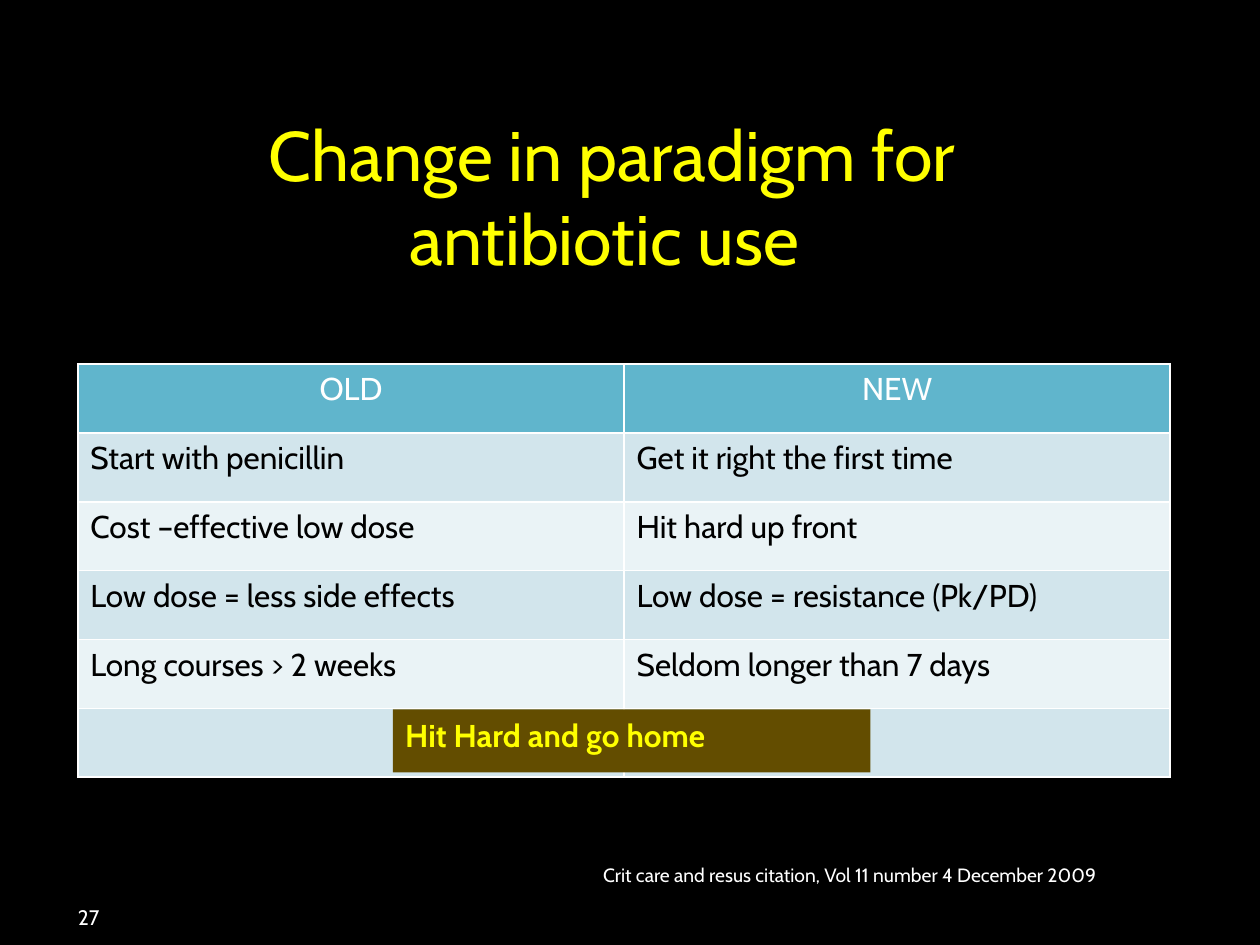
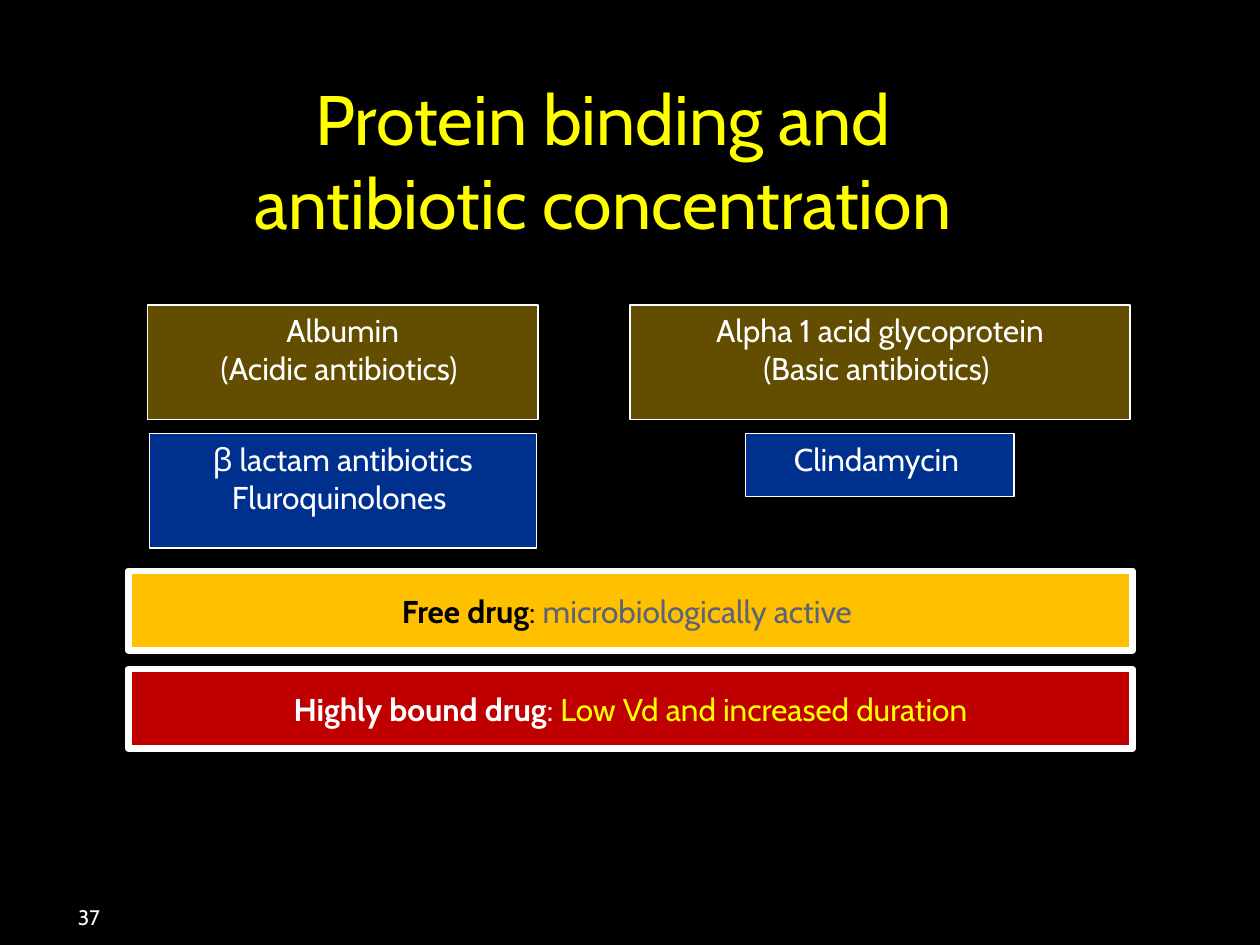
import pptx
import pptx.dml.color
import pptx.enum.shapes
import pptx.enum.text
import pptx.oxml
import pptx.oxml.ns
import pptx.util
from pptx.util import Cm

RGBColor = pptx.dml.color.RGBColor
ALIGN = pptx.enum.text.PP_ALIGN
ANCHOR = pptx.enum.text.MSO_ANCHOR

BLACK = RGBColor(0x00, 0x00, 0x00)
WHITE = RGBColor(0xFF, 0xFF, 0xFF)
YELLOW = RGBColor(0xFF, 0xFF, 0x00)
BROWN = RGBColor(0x63, 0x4D, 0x00)
BLUE = RGBColor(0x00, 0x30, 0x8E)
AMBER = RGBColor(0xFF, 0xC0, 0x00)
RED = RGBColor(0xC0, 0x00, 0x00)
SLATE = RGBColor(0x5A, 0x63, 0x78)
HEADER_TEAL = RGBColor(0x60, 0xB5, 0xCC)
BAND_DARK = RGBColor(0xD2, 0xE5, 0xEC)
BAND_LIGHT = RGBColor(0xEA, 0xF3, 0xF6)

FONT = "Cabin"
BODY_SIZE = 18

PARADIGM_ROWS = [
    ("OLD", "NEW"),
    ("Start with penicillin", "Get it right the first time"),
    ("Cost –effective low dose", "Hit hard up front"),
    ("Low dose = less side effects", "Low dose = resistance (Pk/PD)"),
    ("Long courses > 2 weeks", "Seldom longer than 7 days"),
    ("", ""),
]


def add_span(para, text, color, size=BODY_SIZE, bold=False):
    span = para.add_run()
    span.text = text
    span.font.name = FONT
    span.font.size = pptx.util.Pt(size)
    span.font.bold = bold
    span.font.color.rgb = color


def write_lines(frame, lines, align=ALIGN.LEFT, anchor=ANCHOR.TOP):
    """Each line is a list of spans: (text, color, size, bold), the last two optional."""
    frame.word_wrap = True
    frame.vertical_anchor = anchor
    for index, spans in enumerate(lines):
        para = frame.add_paragraph() if index else frame.paragraphs[0]
        para.alignment = align
        for span in spans:
            add_span(para, *span)


def add_text(page, box, lines, **layout):
    frame = page.shapes.add_textbox(*map(Cm, box)).text_frame
    write_lines(frame, lines, **layout)
    return frame


def add_panel(page, box, fill, lines, line_width=0, **layout):
    panel = page.shapes.add_shape(
        pptx.enum.shapes.MSO_SHAPE.RECTANGLE, *map(Cm, box))
    panel.shadow.inherit = False
    panel.fill.solid()
    panel.fill.fore_color.rgb = fill
    if line_width:
        panel.line.color.rgb = WHITE
        panel.line.width = pptx.util.Pt(line_width)
    else:
        panel.line.fill.background()
    write_lines(panel.text_frame, lines, **layout)


def add_page(deck, number, title_lines, title_box):
    """Black page with its yellow title and its page number."""
    page = deck.slides.add_slide(deck.slide_layouts[6])
    page.background.fill.solid()
    page.background.fill.fore_color.rgb = BLACK
    add_text(page, title_box, [[(line, YELLOW, 40)] for line in title_lines],
             align=ALIGN.CENTER)
    footer = add_text(page, (1.27, 17.98, 5.92, 0.76),
                      [[(number, WHITE, 12)]], anchor=ANCHOR.BOTTOM)
    footer.margin_left = Cm(0.3)
    footer.margin_bottom = 0
    footer.margin_top = footer.margin_right = Cm(0.13)
    return page


def add_cell_borders(cell):
    properties = cell._tc.get_or_add_tcPr()
    for index, side in enumerate(("lnL", "lnR", "lnT", "lnB")):
        border = pptx.oxml.parse_xml(
            f'<a:{side} {pptx.oxml.ns.nsdecls("a")} w="12700"><a:solidFill>'
            f'<a:srgbClr val="{WHITE}"/></a:solidFill></a:{side}>')
        properties.insert(index, border)


def add_paradigm_table(page, box):
    row_count, column_count = len(PARADIGM_ROWS), len(PARADIGM_ROWS[0])
    table = page.shapes.add_table(row_count, column_count, *map(Cm, box)).table
    for column in table.columns:
        column.width = Cm(box[2] / column_count)
    for index, texts in enumerate(PARADIGM_ROWS):
        table.rows[index].height = Cm(box[3] / row_count)
        header = index == 0
        band = BAND_DARK if index % 2 else BAND_LIGHT
        for cell, text in zip(table.rows[index].cells, texts):
            cell.fill.solid()
            cell.fill.fore_color.rgb = HEADER_TEAL if header else band
            add_cell_borders(cell)
            if text:
                para = cell.text_frame.paragraphs[0]
                para.alignment = ALIGN.CENTER if header else ALIGN.LEFT
                add_span(para, text, WHITE if header else BLACK)


def add_protein_column(page, center, top, protein, drugs):
    """Protein panel above its drug panel; each is (width, lines)."""
    for (width, texts), fill in ((protein, BROWN), (drugs, BLUE)):
        height = 0.23 + 1.04 * len(texts)
        add_panel(page, (center - width / 2, top, width, height), fill,
                  [[(text, WHITE)] for text in texts], 0.75, align=ALIGN.CENTER)
        top += height + 0.28


def add_drug_bars(page, box, gap):
    left, top, width, height = box
    bars = [
        (AMBER, "Free drug", BLACK, "microbiologically active ", SLATE),
        (RED, "Highly bound drug", WHITE, "Low Vd and increased duration", YELLOW),
    ]
    for index, (fill, name, name_color, effect, effect_color) in enumerate(bars):
        spans = [(name, name_color, BODY_SIZE, True), (": ", name_color),
                 (effect, effect_color)]
        add_panel(page, (left, top + index * (height + gap), width, height),
                  fill, [spans], 3.78, align=ALIGN.CENTER, anchor=ANCHOR.MIDDLE)


def add_paradigm_page(deck):
    page = add_page(deck, "27", ["Change in paradigm for antibiotic use "],
                    (4.9, 2.13, 14.88, 3.68))
    add_paradigm_table(page, (1.57, 7.34, 22.02, 8.33))
    add_text(page, (11.91, 17.27, 11.25, 0.74), [[(
        "Crit care and resus citation, Vol 11 number 4 December 2009", WHITE, 11)]])
    add_panel(page, (7.92, 14.3, 9.63, 1.27), BROWN,
              [[("Hit Hard and go home", YELLOW, BODY_SIZE, True)]])


def add_binding_page(deck):
    page = add_page(deck, "37", ["Protein binding and ", "antibiotic concentration "],
                    (4.57, 1.4, 15.49, 3.68))
    add_protein_column(page, 6.91, 6.15,
                       (7.87, ["Albumin", "(Acidic antibiotics) "]),
                       (7.8, ["β lactam antibiotics", "Fluroquinolones "]))
    add_protein_column(page, 17.74, 6.15,
                       (10.08, ["Alpha 1 acid glycoprotein", "(Basic antibiotics) "]),
                       (5.41, ["Clindamycin "]))
    add_drug_bars(page, (2.59, 11.51, 20.24, 1.6), 0.38)


def main():
    deck = pptx.Presentation()
    deck.slide_width, deck.slide_height = Cm(25.4), Cm(19.05)
    add_paradigm_page(deck)
    add_binding_page(deck)
    deck.save("out.pptx")


if __name__ == "__main__":
    main()
